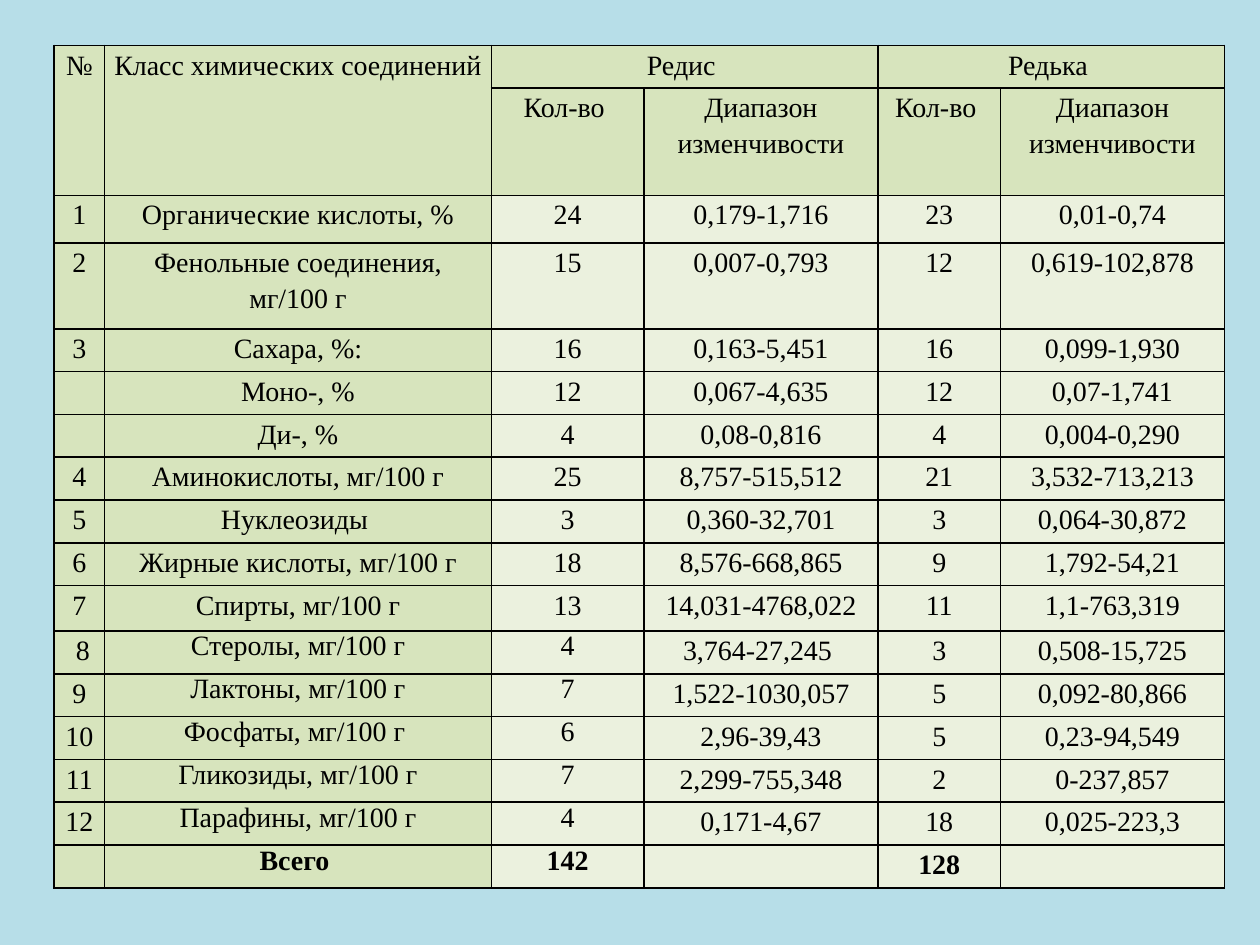
from lxml.etree import SubElement
from pptx import Presentation
from pptx.dml.color import RGBColor
from pptx.enum.text import PP_ALIGN as Align
from pptx.oxml.ns import qn
from pptx.util import Inches, Pt

COLORS = {"background": "B7DEE8", "label": "D7E4BD", "value": "EBF1DE", "ink": "000000"}
COLUMNS = [0.4, 3.07, 1.21, 1.86, 0.97, 1.78]
HEADER_HEIGHTS = [0.34, 0.85]
ROW_HEIGHT = 0.34
TALL_ROWS = {2: 0.38, 3: 0.68, 10: 0.36}
MERGES = [(0, 0, 1, 0), (0, 1, 1, 1), (0, 2, 0, 3), (0, 4, 0, 5)]
FIRST_TIGHT_ROW = 11
ROWS = [
    ["№", "Класс химических соединений", "Редис ", "", "Редька ", ""],
    ["", "", "Кол-во ", "Диапазон изменчивости", "Кол-во ", "Диапазон изменчивости"],
    ["1", "Органические кислоты, %", "24", "0,179-1,716", "23", "0,01-0,74"],
    ["2", "Фенольные соединения, мг/100 г", "15", "0,007-0,793", "12", "0,619-102,878"],
    ["3", "Сахара, %:", "16", "0,163-5,451", "16", "0,099-1,930"],
    ["", "Моно-, %", "12", "0,067-4,635", "12", "0,07-1,741"],
    ["", "Ди-, %", "4", "0,08-0,816", "4", "0,004-0,290"],
    ["4", "Аминокислоты, мг/100 г", "25", "8,757-515,512", "21", "3,532-713,213"],
    ["5", "Нуклеозиды ", "3", "0,360-32,701", "3", "0,064-30,872"],
    ["6", "Жирные кислоты, мг/100 г", "18", "8,576-668,865", "9", "1,792-54,21"],
    ["7", "Спирты, мг/100 г", "13", "14,031-4768,022", "11", "1,1-763,319"],
    [" 8", "Стеролы, мг/100 г", "4", "3,764-27,245 ", "3", "0,508-15,725"],
    ["9", "Лактоны, мг/100 г", "7", "1,522-1030,057", "5", "0,092-80,866"],
    ["10", "Фосфаты, мг/100 г ", "6", "2,96-39,43", "5", "0,23-94,549"],
    ["11", "Гликозиды, мг/100 г", "7", "2,299-755,348", "2", "0-237,857"],
    ["12", "Парафины, мг/100 г", "4", "0,171-4,67", "18", "0,025-223,3"],
    ["", "Всего ", "142", "", "128", ""],
]


def write(tf, text, font="Times New Roman", size=16, color="ink", bold=False, spacing=1.15):
    p = tf.paragraphs[0]
    p.alignment = Align.CENTER
    p.line_spacing = spacing
    r = p.add_run()
    r.text = text
    r.font.name = font
    r.font.size = Pt(size)
    r.font.bold = bold
    r.font.color.rgb = RGBColor.from_string(COLORS[color])


class CompoundSlide:
    """Slide with a bordered table of chemical compounds."""

    def __init__(self, prs):
        self.s = prs.slides.add_slide(prs.slide_layouts[6])
        self.paint(self.s.background.fill, "background")

    def paint(self, fill, color):
        fill.solid()
        fill.fore_color.rgb = RGBColor.from_string(COLORS[color])

    def border(self, cell, width=1):
        tc_pr = cell._tc.get_or_add_tcPr()
        for side in ("a:lnL", "a:lnR", "a:lnT", "a:lnB"):
            ln = SubElement(tc_pr, qn(side), w=str(Pt(width)))
            fill = SubElement(ln, qn("a:solidFill"))
            SubElement(fill, qn("a:srgbClr"), val=COLORS["ink"])

    def cell(self, cell, text, color, **style):
        cell.margin_left = cell.margin_right = Inches(0.07)
        cell.margin_top = cell.margin_bottom = 0
        self.border(cell)
        self.paint(cell.fill, color)
        if text:
            write(cell.text_frame, text, **style)

    def table(self, rows, left, top, widths, heights):
        sp = self.s.shapes.add_table(len(rows), len(widths), Inches(left), Inches(top),
                                     Inches(sum(widths)), Inches(sum(heights)))
        table = sp.table
        for column, width in zip(table.columns, widths):
            column.width = Inches(width)
        for row, height in zip(table.rows, heights):
            row.height = Inches(height)
        for i, row in enumerate(rows):
            for j, text in enumerate(row):
                is_label = i < len(HEADER_HEIGHTS) or j < 2
                is_tight = i >= FIRST_TIGHT_ROW and j in (1, 2)
                self.cell(table.cell(i, j), text, "label" if is_label else "value",
                          bold=i == len(rows) - 1, spacing=1.0 if is_tight else 1.15)
        for top_row, first, bottom_row, last in MERGES:
            table.cell(top_row, first).merge(table.cell(bottom_row, last))


def main():
    prs = Presentation()
    prs.slide_width, prs.slide_height = Inches(10), Inches(7.5)
    heights = HEADER_HEIGHTS + [TALL_ROWS.get(i, ROW_HEIGHT)
                                for i in range(len(HEADER_HEIGHTS), len(ROWS))]
    CompoundSlide(prs).table(ROWS, 0.43, 0.36, COLUMNS, heights)
    prs.save("out.pptx")


if __name__ == "__main__":
    main()
